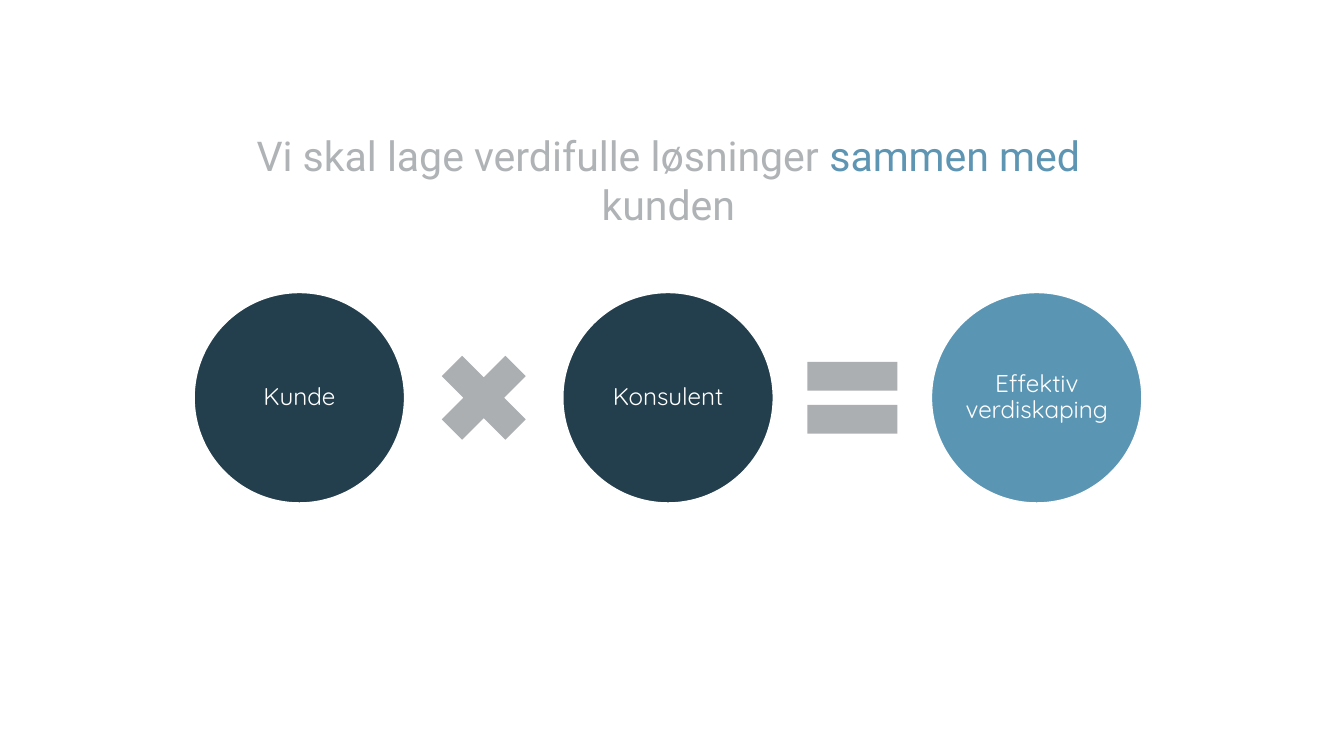
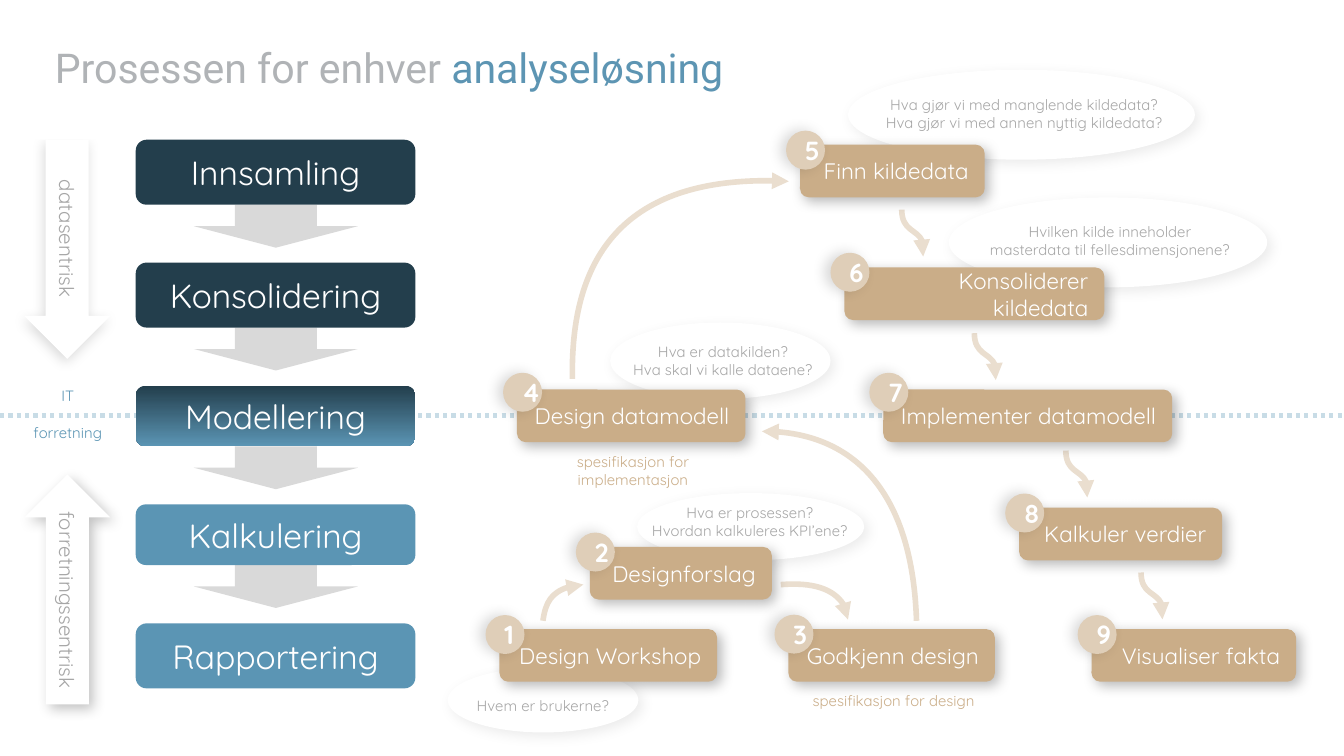
"""Build two slides: the value equation and the process for analytics solutions."""
import lxml.etree
import pptx
import pptx.dml.color
import pptx.enum.dml
import pptx.enum.shapes
import pptx.enum.text
import pptx.oxml.ns
import pptx.util

Pt = pptx.util.Pt
qn = pptx.oxml.ns.qn
SHAPE = pptx.enum.shapes.MSO_SHAPE
ALIGN = pptx.enum.text.PP_ALIGN
ANCHOR = pptx.enum.text.MSO_ANCHOR

NAVY, BLUE, TITLE_BLUE = "233E4C", "5B95B4", "5D95B3"
TITLE_GREY, SIGN_GREY, NOTE_GREY, ARROW_GREY = "B0B3B6", "ACAFB2", "A6A6A6", "D9D9D9"
SAND, PALE_SAND, CURVE_SAND = "CAAD88", "DFCEB8", "EADECF"
WHITE, DIVIDER_BLUE = "FFFFFF", "C8DCE6"

VALUE_TITLE = [("Vi skal lage verdifulle løsninger ", TITLE_GREY),
               ("sammen med ", TITLE_BLUE), ("kunden", TITLE_GREY)]
FACTORS = [("Kunde", NAVY), ("Konsulent", NAVY), ("Effektiv verdiskaping", BLUE)]
SIGNS = [(SHAPE.MATH_PLUS, 45), (SHAPE.MATH_EQUAL, 0)]

PROCESS_TITLE = [("Prosessen for enhver ", TITLE_GREY), ("analyseløsning", TITLE_BLUE)]
STAGES = [
    ("Innsamling", 74.9, 34.8, NAVY),
    ("Konsolidering", 140.7, 34.8, NAVY),
    ("Modellering", 206.6, 32.5, (NAVY, BLUE)),
    ("Kalkulering", 270.2, 32.5, BLUE),
    ("Rapportering", 334, 34.8, BLUE),
]
STEPS = [
    ("Design Workshop", 267.6, 337, 116.6, 329.5),
    ("Designforslag", 316, 293, 97.5, 285.3),
    ("Godkjenn design", 422.4, 337, 110.6, 329.3),
    ("Design datamodell", 277, 208.7, 122.4, 199.7),
    ("Finn kildedata", 428.6, 77.5, 98.9, 70),
    ("Konsoliderer kildedata", 452.4, 143.3, 139.2, 135.4),
    ("Implementer datamodell", 473.2, 208.7, 154.8, 199.7),
    ("Kalkuler verdier", 546, 272, 108.8, 264.4),
    ("Visualiser fakta", 584.8, 337, 109.6, 329.5),
]
QUESTIONS = [
    ("Hvilken kilde inneholder\vmasterdata til fellesdimensjonene?",
     (508.3, 105.8, 170.6, 48.2), (522, 115.9, 145.4, 26.6)),
    ("Hva gjør vi med manglende kildedata?\nHva gjør vi med annen nyttig kildedata?",
     (454.3, 37.4, 185.8, 48.2), (459.4, 47.5, 178.6, 26.6)),
    ("Hva er datakilden?\nHva skal vi kalle dataene?",
     (326.9, 172.8, 118.1, 41), (327.6, 180, 119.5, 26.6)),
    ("Hva er prosessen?\nHvordan kalkuleres KPI’ene?",
     (341.3, 264.2, 121.7, 36), (342, 266.4, 119.5, 26.6)),
    ("Hvem er brukerne?", (239.8, 357.8, 102.2, 34.6), (231.1, 369.4, 119.5, 17.3)),
]
CAPTIONS = [
    ("spesifikasjon for\vimplementasjon", (272.2, 239, 133.9, 26.6), SAND),
    ("spesifikasjon for design", (423.4, 367.2, 110.9, 17.3), SAND),
    ("IT", (0, 203.8, 72.7, 17.3), BLUE),
    ("forretning", (0, 223.2, 72.7, 17.3), BLUE),
]
CURVES = [
    [(290.9, 332.6), (292.3, 322.6), (297.4, 313.9), (312.5, 313.2)],
    [(418.3, 313.2), (435.6, 311.8), (454.3, 317.5), (454.3, 331.9)],
    [(491, 332.6), (488.9, 266.4), (456.5, 230.4), (408.2, 231.1)],
    [(306.7, 203), (305.3, 131), (343.4, 92.9), (422.6, 97.2)],
]
BEND = [(0, 0), (0, 11.6), (14.4, 10.7), (11.5, 25.1)]
BEND_STARTS = [(483.1, 112.3), (522, 178.5), (571, 241.4), (611.3, 306.7)]


def rgb(colour):
    return pptx.dml.color.RGBColor.from_string(colour)


def write(frame, text, size=8, colour=WHITE, font="Quicksand", align=ALIGN.CENTER,
          anchor=ANCHOR.MIDDLE, bold=False, inset=None, spacing=None, vert=None):
    frame.word_wrap = True
    frame.vertical_anchor = anchor
    if inset is not None:
        frame.margin_left = frame.margin_right = Pt(inset)
        frame.margin_top = frame.margin_bottom = Pt(inset)
    if vert:
        frame._txBody.bodyPr.set("vert", vert)
    parts = [(text, colour)] if isinstance(text, str) else text
    paragraph = frame.paragraphs[0]
    for words, part_colour in parts:
        for p_index, passage in enumerate(words.split("\n")):
            if p_index:
                paragraph = frame.add_paragraph()
            paragraph.alignment = align
            if spacing:
                paragraph.line_spacing = spacing
            for l_index, line in enumerate(passage.split("\v")):
                if l_index:
                    paragraph.add_line_break()
                run = paragraph.add_run()
                run.text = line
                run.font.size, run.font.name, run.font.bold = Pt(size), font, bold
                run.font.color.rgb = rgb(part_colour)


def add_text(slide, box, text, **style):
    frame = slide.shapes.add_textbox(*map(Pt, box)).text_frame
    write(frame, text, **{"anchor": ANCHOR.TOP, **style})


def add_title(slide, box, text):
    add_text(slide, box, text, size=22, font="Roboto", inset=0)


def add_shadow(shape, alpha, distance=3, angle=45):
    effects = shape._element.spPr.find(qn("a:effectLst"))
    outer = lxml.etree.SubElement(
        effects, qn("a:outerShdw"), blurRad=str(Pt(7)), dist=str(Pt(distance)),
        dir=str(angle * 60000), algn="ctr", rotWithShape="0")
    black = lxml.etree.SubElement(outer, qn("a:srgbClr"), val="000000")
    lxml.etree.SubElement(black, qn("a:alpha"), val=str(alpha * 1000))


def add_shape(slide, kind, box, fill, outline=None, rotation=0):
    shape = slide.shapes.add_shape(kind, *map(Pt, box))
    shape.shadow.inherit = False
    shape.rotation = rotation
    if isinstance(fill, tuple):
        shape.fill.gradient()
        shape.fill.gradient_angle = 270
        for stop, colour in zip(shape.fill.gradient_stops, fill):
            stop.color.rgb = rgb(colour)
    else:
        shape.fill.solid()
        shape.fill.fore_color.rgb = rgb(fill)
    if outline:
        shape.line.color.rgb = rgb(outline)
        shape.line.width = Pt(1)
    else:
        shape.line.fill.background()
    return shape


def add_curve(slide, points):
    start, *rest = [(Pt(x), Pt(y)) for x, y in points]
    builder = slide.shapes.build_freeform(*start)
    builder.add_line_segments(rest, close=False)
    curve = builder.convert_to_shape()
    curve.shadow.inherit = False
    curve.fill.background()
    curve.line.color.rgb = rgb(CURVE_SAND)
    curve.line.width = Pt(3)
    lxml.etree.SubElement(curve.line._get_or_add_ln(), qn("a:tailEnd"), type="triangle")
    outline = curve._element.spPr.find(".//" + qn("a:path"))
    bezier = lxml.etree.SubElement(outline, qn("a:cubicBezTo"))
    for segment in outline.findall(qn("a:lnTo")):
        bezier.append(segment[0])
        outline.remove(segment)


def build_value_slide(slide):
    left, top, diameter, pitch, sign = 103.9, 156.6, 113, 197.5, 65.5
    middle = top + diameter / 2
    for index, (factor, colour) in enumerate(FACTORS):
        x = left + index * pitch
        add_shape(slide, SHAPE.OVAL, (x, top, diameter, diameter), colour, WHITE)
        add_text(slide, (x + 16.5, top + 16.5, 80, 80), factor, size=13,
                 anchor=ANCHOR.MIDDLE, inset=1.4, spacing=0.9)
    for index, (kind, rotation) in enumerate(SIGNS):
        centre = left + diameter / 2 + (index + 0.5) * pitch
        add_shape(slide, kind, (centre - sign / 2, middle - sign / 2, sign, sign),
                  SIGN_GREY, rotation=rotation)
    add_title(slide, (left, 69.8, 508.3, 26.6), VALUE_TITLE)


def add_divider(slide):
    divider = slide.shapes.add_connector(
        pptx.enum.shapes.MSO_CONNECTOR.STRAIGHT, Pt(0), Pt(222.6), Pt(720), Pt(222.6))
    divider.line.color.rgb = rgb(DIVIDER_BLUE)
    divider.line.width = Pt(2.25)
    divider.line.dash_style = pptx.enum.dml.MSO_LINE.ROUND_DOT
    lxml.etree.SubElement(divider._element.spPr, qn("a:effectLst"))


def add_focus_arrows(slide):
    business = add_shape(slide, SHAPE.DOWN_ARROW, (13, 254.2, 46.1, 123.1), WHITE, rotation=180)
    add_shadow(business, 24)
    write(business.text_frame, "forretningssentrisk", size=11, colour=NOTE_GREY, vert="vert270")
    data = add_shape(slide, SHAPE.DOWN_ARROW, (13, 74.9, 46.1, 117.4), WHITE)
    add_shadow(data, 15, distance=2, angle=114)
    write(data.text_frame, "datasentrisk", size=11, colour=NOTE_GREY, vert="vert")
    add_shape(slide, SHAPE.RECTANGLE, (17.3, 64.8, 38.2, 10.1), WHITE)


def build_process_slide(slide):
    for question, bubble, box in QUESTIONS:
        add_shadow(add_shape(slide, SHAPE.OVAL, bubble, WHITE), 8)
        add_text(slide, box, question, colour=NOTE_GREY)
    add_divider(slide)
    for _, top, height, _ in STAGES[:-1]:
        add_shape(slide, SHAPE.DOWN_ARROW, (103.9, top + height, 87.8, 23), ARROW_GREY)
    add_title(slide, (0, 23, 416.9, 26.6), PROCESS_TITLE)
    for stage, top, height, fill in STAGES:
        block = add_shape(slide, SHAPE.ROUNDED_RECTANGLE, (72.7, top, 149.8, height), fill)
        write(block.text_frame, stage, size=18)
    add_focus_arrows(slide)
    bends = [[(x + dx, y + dy) for dx, dy in BEND] for x, y in BEND_STARTS]
    for points in CURVES + bends:
        add_curve(slide, points)
    for number, (step, left, top, width, badge_top) in enumerate(STEPS, 1):
        card = add_shape(slide, SHAPE.ROUNDED_RECTANGLE, (left, top, width, 28.2), SAND)
        add_shadow(card, 28)
        write(card.text_frame, step, size=12, align=ALIGN.RIGHT)
        badge = add_shape(slide, SHAPE.OVAL, (left - 7.5, badge_top, 20.9, 20.9), PALE_SAND)
        add_shadow(badge, 14, angle=187)
        write(badge.text_frame, str(number), size=14, bold=True)
    for caption, box, colour in CAPTIONS:
        add_text(slide, box, caption, colour=colour)


def main():
    deck = pptx.Presentation()
    deck.slide_width, deck.slide_height = Pt(720), Pt(405)
    for build in (build_value_slide, build_process_slide):
        build(deck.slides.add_slide(deck.slide_layouts[6]))
    deck.save("out.pptx")


if __name__ == "__main__":
    main()
